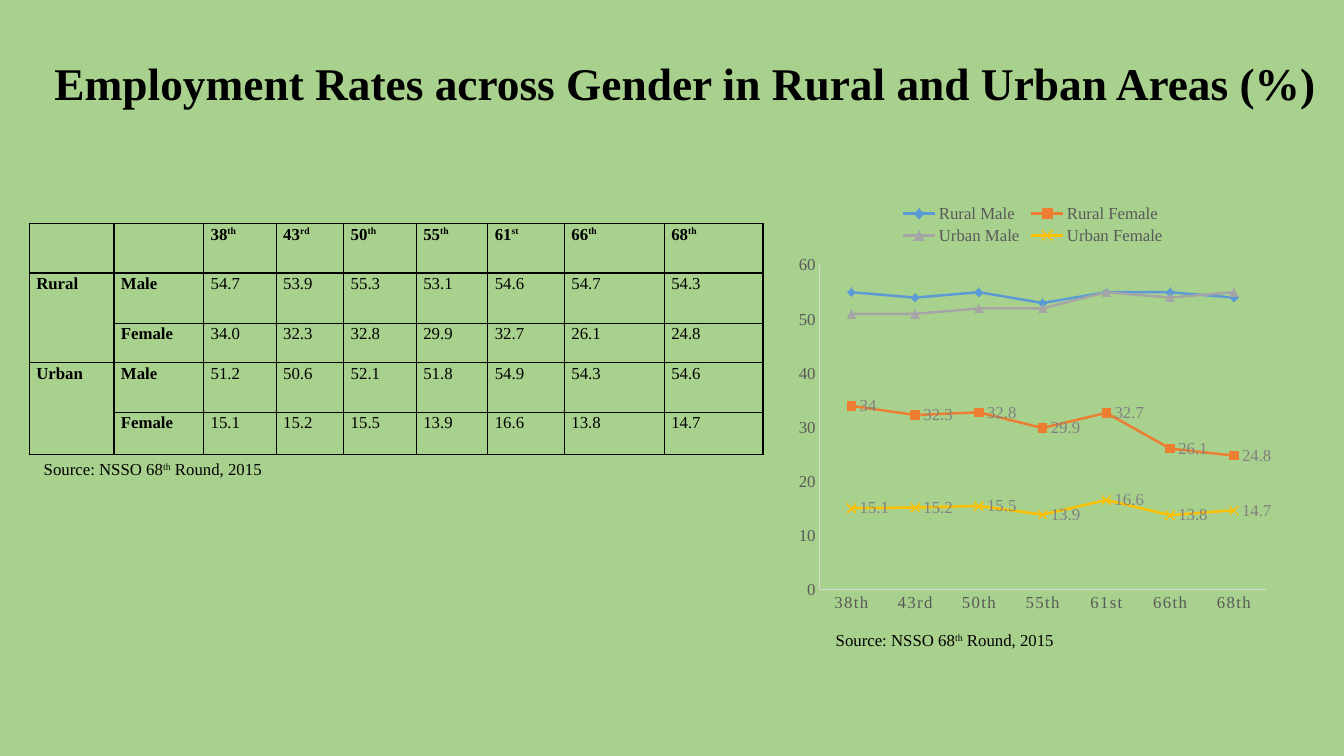
from dataclasses import dataclass

from lxml.etree import SubElement
from pptx import Presentation
from pptx.chart.data import CategoryChartData
from pptx.dml.color import RGBColor
from pptx.enum.chart import (XL_CHART_TYPE, XL_LABEL_POSITION, XL_LEGEND_POSITION,
                             XL_MARKER_STYLE, XL_TICK_MARK)
from pptx.enum.text import MSO_ANCHOR, PP_ALIGN
from pptx.oxml import parse_xml
from pptx.oxml.ns import nsdecls, qn
from pptx.util import Inches, Pt

BLACK = RGBColor(0x00, 0x00, 0x00)
GREEN = RGBColor(0xA9, 0xD1, 0x8E)
AXIS_TEXT = RGBColor(0x59, 0x59, 0x59)
AXIS_LINE = RGBColor(0xD9, 0xD9, 0xD9)
LABEL_GRAY = RGBColor(0x80, 0x80, 0x80)
FONT = "Times New Roman"

ROUNDS = [("38", "th"), ("43", "rd"), ("50", "th"), ("55", "th"),
          ("61", "st"), ("66", "th"), ("68", "th")]
COL_WIDTHS = [0.84, 0.89, 0.72, 0.67, 0.72, 0.71, 0.76, 0.99, 0.98]
ROW_HEIGHTS = [0.49, 0.5, 0.39, 0.49, 0.42]


@dataclass
class Group:
    area: str
    gender: str
    rates: list[float]
    color: RGBColor
    marker: XL_MARKER_STYLE
    labelled: bool


@dataclass
class Source:
    box: tuple[float, float, float, float]
    align: PP_ALIGN
    wrap: bool


GROUPS = [
    Group("Rural", "Male", [54.7, 53.9, 55.3, 53.1, 54.6, 54.7, 54.3],
          RGBColor(0x5B, 0x9B, 0xD5), XL_MARKER_STYLE.DIAMOND, False),
    Group("Rural", "Female", [34.0, 32.3, 32.8, 29.9, 32.7, 26.1, 24.8],
          RGBColor(0xED, 0x7D, 0x31), XL_MARKER_STYLE.SQUARE, True),
    Group("Urban", "Male", [51.2, 50.6, 52.1, 51.8, 54.9, 54.3, 54.6],
          RGBColor(0xA5, 0xA5, 0xA5), XL_MARKER_STYLE.TRIANGLE, False),
    Group("Urban", "Female", [15.1, 15.2, 15.5, 13.9, 16.6, 13.8, 14.7],
          RGBColor(0xFF, 0xC0, 0x00), XL_MARKER_STYLE.X, True),
]
SOURCES = [
    Source((-0.11, 4.57, 3.25, 0.16), PP_ALIGN.CENTER, True),
    Source((8.19, 6.2, 2.69, 0.3), PP_ALIGN.LEFT, False),
]


def set_attrs(obj, values: dict) -> None:
    for name, value in values.items():
        setattr(obj, name, value)


def style_font(font, size: float = 12, color: RGBColor = BLACK, bold: bool = False) -> None:
    set_attrs(font, {"name": FONT, "size": Pt(size), "bold": bold})
    font.color.rgb = color


def add_run(p, text: str, bold: bool = False, raised: bool = False) -> None:
    r = p.add_run()
    r.text = text
    style_font(r.font, bold=bold)
    if raised:
        r.font._element.set("baseline", "30000")


def add_title(slide) -> None:
    sp = slide.shapes.title
    set_attrs(sp, {"left": Inches(0.44), "top": Inches(0.63),
                   "width": Inches(12.8), "height": Inches(0.44)})
    tf = sp.text_frame
    set_attrs(tf, {"word_wrap": True, "vertical_anchor": MSO_ANCHOR.MIDDLE})
    p = tf.paragraphs[0]
    set_attrs(p, {"alignment": PP_ALIGN.LEFT, "line_spacing": 0.9})
    r = p.add_run()
    r.text = "Employment Rates across Gender in Rural and Urban Areas (%)"
    style_font(r.font, 32.4, bold=True)


def set_borders(cell, widths: dict[str, float]) -> None:
    tc_pr = cell._tc.get_or_add_tcPr()
    for i, (side, width) in enumerate(widths.items()):
        tc_pr.insert(i, parse_xml(
            f'<a:{side} {nsdecls("a")} w="{Pt(width)}"><a:solidFill>'
            f'<a:srgbClr val="{BLACK}"/></a:solidFill></a:{side}>'))


def add_rate_table(slide) -> None:
    frame = slide.shapes.add_table(
        len(ROW_HEIGHTS), len(COL_WIDTHS), Inches(0.29), Inches(2.22),
        Inches(sum(COL_WIDTHS)), Inches(sum(ROW_HEIGHTS)))
    table = frame.table
    set_attrs(table, {"first_row": False, "horz_banding": False})
    for col, width in zip(table.columns, COL_WIDTHS):
        col.width = Inches(width)
    for row, height in zip(table.rows, ROW_HEIGHTS):
        row.height = Inches(height)

    # Header, then one row per group; the area name sits in a merged cell
    rows = [["", ""] + ROUNDS]
    for i, g in enumerate(GROUPS):
        rows.append([g.area if i % 2 == 0 else "", g.gender] + [f"{v:.1f}" for v in g.rates])
    for i, row in enumerate(rows):
        for j, value in enumerate(row):
            cell = table.cell(i, j)
            set_attrs(cell, {"margin_left": Inches(0.07), "margin_right": Inches(0.07),
                             "margin_top": 0, "margin_bottom": 0})
            cell.fill.background()
            set_borders(cell, {"lnL": 1, "lnR": 1, "lnT": 1.5 if i == 1 else 1,
                               "lnB": 1.5 if i == 0 else 1})
            p = cell.text_frame.paragraphs[0]
            set_attrs(p, {"alignment": PP_ALIGN.JUSTIFY, "line_spacing": 1.07})
            if isinstance(value, tuple):
                add_run(p, value[0], bold=True)
                add_run(p, value[1], bold=True, raised=True)
            elif value:
                add_run(p, value, bold=j < 2)
    for top in (1, 3):
        table.cell(top, 0).merge(table.cell(top + 1, 0))


def manual_layout(inner: bool, x: float, y: float, w: float, h: float):
    layout = parse_xml(f'<c:layout {nsdecls("c")}><c:manualLayout/></c:layout>')
    values = {"layoutTarget": "inner"} if inner else {}
    values |= {"xMode": "edge", "yMode": "edge", "x": x, "y": y, "w": w, "h": h}
    for name, value in values.items():
        SubElement(layout[0], qn(f"c:{name}")).set("val", str(value))
    return layout


def place(element, layout) -> None:
    for old in element.findall(qn("c:layout")):
        element.remove(old)
    pos = element.find(qn("c:legendPos"))
    element.insert(0 if pos is None else 1, layout)


def add_rate_chart(slide) -> None:
    data = CategoryChartData()
    data.categories = [number + suffix for number, suffix in ROUNDS]
    for g in GROUPS:
        # Lines without labels are plotted in whole percent
        rates = g.rates if g.labelled else [round(v) for v in g.rates]
        data.add_series(f"{g.area} {g.gender}", rates)
    chart = slide.shapes.add_chart(
        XL_CHART_TYPE.LINE_MARKERS, Inches(7.84), Inches(1.91),
        Inches(4.81), Inches(4.24), data).chart
    style_font(chart.font)
    set_attrs(chart, {"has_title": False, "has_legend": True})
    set_attrs(chart.legend, {"position": XL_LEGEND_POSITION.TOP, "include_in_layout": False})
    style_font(chart.legend.font, color=AXIS_TEXT)
    place(chart.legend._element, manual_layout(False, 0.22, 0.02, 0.56, 0.11))
    place(chart._chartSpace.chart.plotArea, manual_layout(True, 0.06, 0.17, 0.92, 0.76))

    # Axes
    for axis in (chart.category_axis, chart.value_axis):
        set_attrs(axis, {"has_major_gridlines": False, "major_tick_mark": XL_TICK_MARK.NONE,
                         "minor_tick_mark": XL_TICK_MARK.NONE})
        style_font(axis.tick_labels.font, color=AXIS_TEXT)
        axis.format.line.color.rgb = AXIS_LINE
        axis.format.line.width = Pt(0.75)
    set_attrs(chart.value_axis, {"minimum_scale": 0, "maximum_scale": 60, "major_unit": 10})
    chart.category_axis.tick_labels.font._element.set("spc", "100")

    # Series
    plot = chart.plots[0]
    plot.vary_by_categories = False
    for series, g in zip(plot.series, GROUPS):
        series.smooth = False
        series.format.line.color.rgb = g.color
        series.format.line.width = Pt(1.75)
        marker = series.marker
        set_attrs(marker, {"style": g.marker, "size": 6})
        marker.format.line.color.rgb = g.color
        if g.marker == XL_MARKER_STYLE.X:
            marker.format.fill.background()
        else:
            marker.format.fill.solid()
            marker.format.fill.fore_color.rgb = g.color
        if g.labelled:
            labels = series.data_labels
            set_attrs(labels, {"show_value": True, "position": XL_LABEL_POSITION.RIGHT})
            style_font(labels.font, color=LABEL_GRAY)


def add_source(slide, source: Source) -> None:
    tf = slide.shapes.add_textbox(*map(Inches, source.box)).text_frame
    set_attrs(tf, {"word_wrap": source.wrap, "vertical_anchor": MSO_ANCHOR.MIDDLE})
    p = tf.paragraphs[0]
    p.alignment = source.align
    add_run(p, "Source: NSSO 68")
    add_run(p, "th", raised=True)
    add_run(p, " Round, 2015")


def main() -> None:
    prs = Presentation()
    set_attrs(prs, {"slide_width": Inches(13.33), "slide_height": Inches(7.5)})
    slide = prs.slides.add_slide(prs.slide_layouts[5])
    slide.background.fill.solid()
    slide.background.fill.fore_color.rgb = GREEN
    add_title(slide)
    add_rate_table(slide)
    add_rate_chart(slide)
    for source in SOURCES:
        add_source(slide, source)
    prs.save("out.pptx")


if __name__ == "__main__":
    main()
